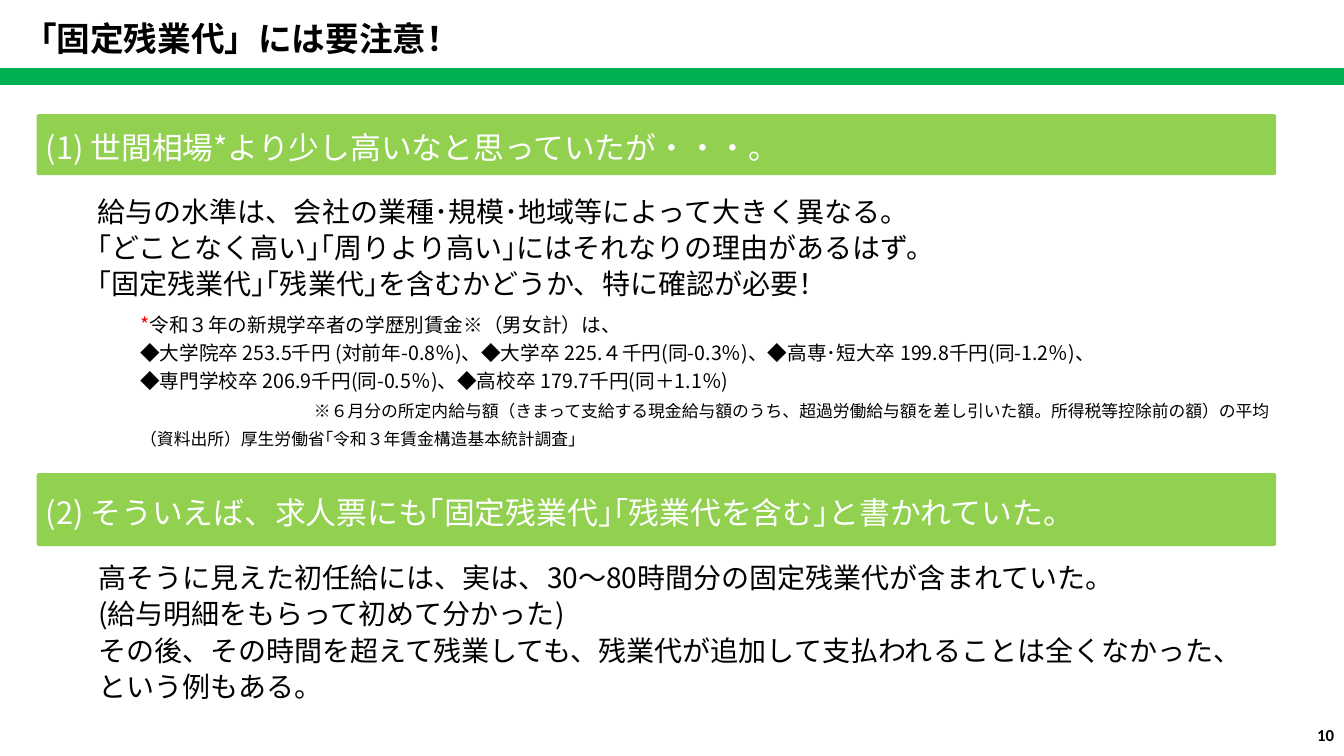
from dataclasses import dataclass

from lxml.etree import SubElement
from pptx import Presentation
from pptx.dml.color import RGBColor as Rgb
from pptx.enum.shapes import MSO_SHAPE as Preset
from pptx.enum.text import MSO_ANCHOR as Anchor, PP_ALIGN as Align
from pptx.oxml.ns import qn
from pptx.util import Inches, Pt


@dataclass(frozen=True)
class Theme:
    japanese: str = "Noto Sans CJK JP"
    latin: str = "Calibri"
    black: str = "000000"
    white: str = "FFFFFF"
    red: str = "FF0000"
    green: str = "00B050"
    lime: str = "92D050"
    title: int = 24
    heading: int = 22
    body: int = 20
    note: int = 14
    small: int = 12


THEME = Theme()


@dataclass(frozen=True)
class Span:
    text: str
    size: int
    color: str = THEME.black
    bold: bool = False
    font: str = THEME.japanese


@dataclass(frozen=True)
class Line:
    spans: tuple[Span, ...]
    spacing: int | None = None
    align: Align = Align.LEFT


@dataclass(frozen=True)
class Block:
    """A box of text; a preset of None makes it a plain text box."""
    at: tuple[float, float, float, float]
    lines: tuple[Line, ...] = ()
    preset: Preset | None = Preset.ROUNDED_RECTANGLE
    fill: str | None = None
    outline: int = 1
    insets: tuple[float, float, float, float] = (0.08, 0.04, 0, 0.04)
    anchor: Anchor = Anchor.MIDDLE


def apply_format(target, values: dict) -> None:
    for name, value in values.items():
        setattr(target, name, value)


def write_line(paragraph, line: Line) -> None:
    paragraph.alignment = line.align
    if line.spacing:
        paragraph.line_spacing = Pt(line.spacing)
    for span in line.spans:
        run = paragraph.add_run()
        run.text = span.text
        apply_format(run.font, {"name": span.font, "size": Pt(span.size), "bold": span.bold})
        run.font.color.rgb = Rgb.from_string(span.color)
        SubElement(run.font._element, qn("a:ea"), typeface=span.font)


def draw_block(slide, block: Block) -> None:
    place = [Inches(length) for length in block.at]
    if block.preset is None:
        box = slide.shapes.add_textbox(*place)
    else:
        box = slide.shapes.add_shape(block.preset, *place)
        box.shadow.inherit = False
        if block.preset == Preset.ROUNDED_RECTANGLE:
            box.adjustments[0] = 0.026
        if block.fill:
            box.fill.solid()
            box.fill.fore_color.rgb = Rgb.from_string(block.fill)
            box.line.color.rgb = Rgb.from_string(block.fill)
            box.line.width = Pt(block.outline)
        else:
            box.fill.background()
            box.line.fill.background()

    frame = box.text_frame
    left, top, right, bottom = map(Inches, block.insets)
    apply_format(frame, {
        "word_wrap": True, "vertical_anchor": block.anchor,
        "margin_left": left, "margin_top": top,
        "margin_right": right, "margin_bottom": bottom,
    })
    for index, line in enumerate(block.lines):
        write_line(frame.add_paragraph() if index else frame.paragraphs[0], line)


def heading(top: float, height: float, text: str) -> Block:
    span = Span(text, THEME.heading, THEME.white)
    return Block((0.37, top, 12.28, height), (Line((span,), 30),), fill=THEME.lime)


def body(top: float, height: float, *texts: str) -> Block:
    """Explanation set one full-width character in from its box."""
    lines = tuple(Line((Span(text, THEME.body),), 26) for text in texts)
    return Block((0.6, top, 12.05, height), lines, insets=(0.36, 0.04, 0, 0.04))


def note(text: str, size: int = THEME.note, align: Align = Align.LEFT, mark: str = "") -> Line:
    spans = (Span(text, size),)
    if mark:
        spans = (Span(mark, size, THEME.red), *spans)
    return Line(spans, 20, align)


PLAIN_INSETS = (0.1, 0.05, 0.1, 0.05)

WAGE_NOTES = (
    note("令和３年の新規学卒者の学歴別賃金※（男女計）は、", mark="*"),
    note("◆大学院卒 253.5千円 (対前年-0.8％)、◆大学卒 225.４千円(同-0.3％)、"
         "◆高専･短大卒 199.8千円(同-1.2％)、"),
    note("◆専門学校卒 206.9千円(同-0.5％)、◆高校卒 179.7千円(同＋1.1％)"),
    note("※６月分の所定内給与額（きまって支給する現金給与額のうち、"
         "超過労働給与額を差し引いた額。所得税等控除前の額）の平均", THEME.small, Align.RIGHT),
    note("（資料出所）厚生労働省｢令和３年賃金構造基本統計調査｣", THEME.small),
)

BLOCKS = (
    heading(1.14, 0.59, "(1) 世間相場*より少し高いなと思っていたが・・・。"),
    heading(4.7, 0.71, "(2) そういえば、求人票にも｢固定残業代｣｢残業代を含む｣と書かれていた。"),
    Block((1.3, 3.04, 11.35, 1.43), WAGE_NOTES, insets=(0.08, 0.04, 0.04, 0.04)),
    body(1.85, 1.18,
         "給与の水準は、会社の業種･規模･地域等によって大きく異なる。",
         "｢どことなく高い｣｢周りより高い｣にはそれなりの理由があるはず。",
         "｢固定残業代｣｢残業代｣を含むかどうか、特に確認が必要！"),
    body(5.39, 1.73,
         "高そうに見えた初任給には、実は、30～80時間分の固定残業代が含まれていた。",
         "(給与明細をもらって初めて分かった)",
         "その後、その時間を超えて残業しても、残業代が追加して支払われることは全くなかった、",
         "という例もある。"),
    Block((0, 0.69, 13.33, 0.14), preset=Preset.RECTANGLE, fill=THEME.green, outline=2),
    Block((0.13, 0.13, 11.81, 0.5),
          (Line((Span("「固定残業代」には要注意！", THEME.title, bold=True),)),),
          preset=None, insets=PLAIN_INSETS, anchor=Anchor.TOP),
    Block((10.22, 7.09, 3.11, 0.4),
          (Line((Span("10", THEME.small, bold=True, font=THEME.latin),), align=Align.RIGHT),),
          preset=None, insets=PLAIN_INSETS),
)


def main() -> None:
    deck = Presentation()
    apply_format(deck, {"slide_width": Inches(13.33), "slide_height": Inches(7.5)})
    slide = deck.slides.add_slide(deck.slide_layouts[6])
    for block in BLOCKS:
        draw_block(slide, block)
    deck.save("out.pptx")


if __name__ == "__main__":
    main()
